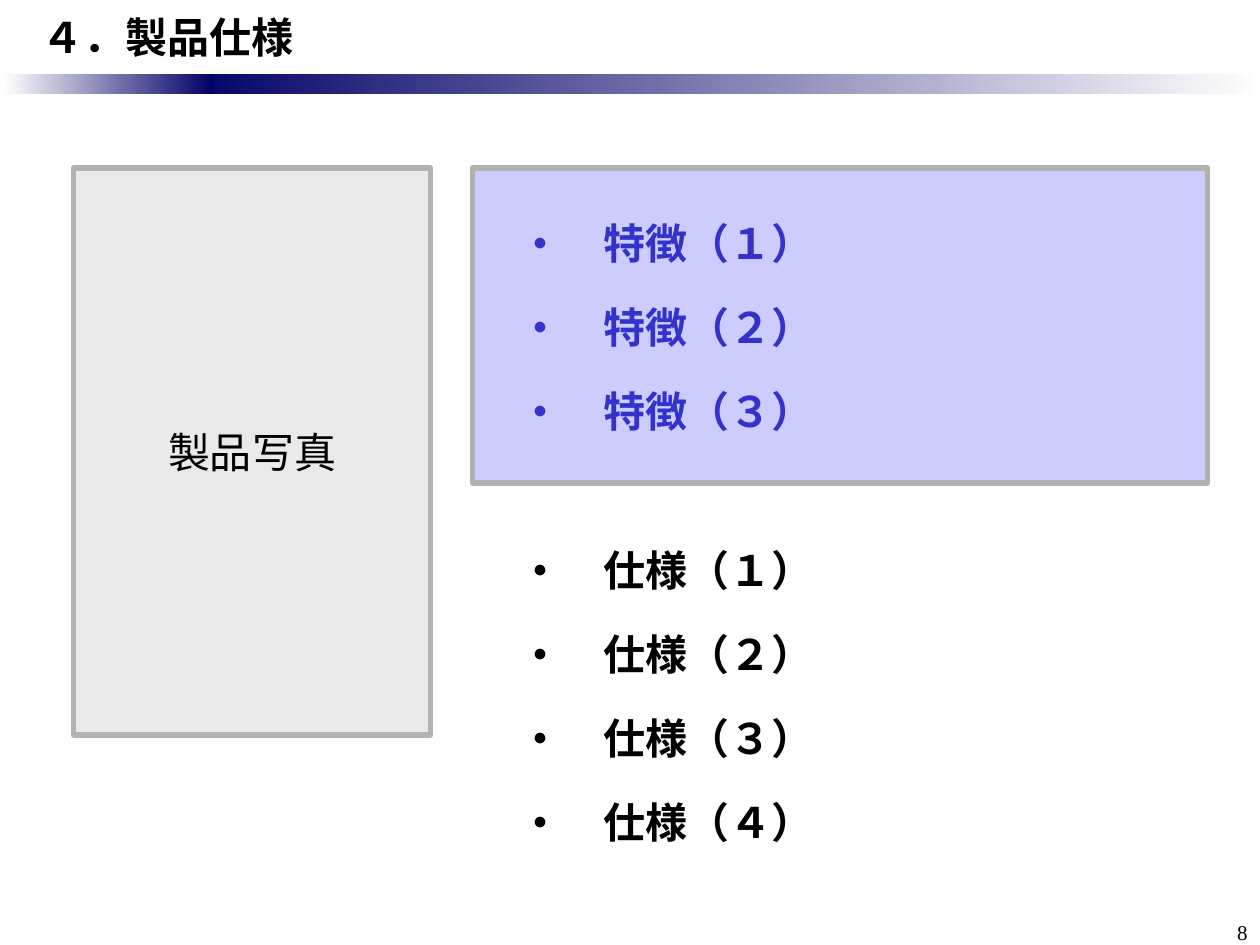
from dataclasses import dataclass

from lxml.etree import SubElement
from pptx import Presentation
from pptx.dml.color import RGBColor as Color
from pptx.enum.shapes import MSO_SHAPE as Shape
from pptx.enum.text import MSO_ANCHOR as Anchor, PP_ALIGN as Align
from pptx.oxml.ns import qn
from pptx.util import Pt


@dataclass(frozen=True)
class Theme:
    gothic: str = "Noto Sans CJK JP"
    roman: str = "Times New Roman"
    body_size: int = 24
    number_size: int = 12
    black: str = "000000"
    white: str = "FFFFFF"
    navy: str = "000066"
    blue: str = "3333CC"
    lavender: str = "CCCCFF"
    pale_gray: str = "EAEAEA"
    border: str = "B2B2B2"
    border_width: int = 3


LIST_SPACING = {"line_spacing": Pt(30), "space_after": Pt(18)}


class SlideBuilder:
    def __init__(self, slide, theme):
        self.slide = slide
        self.theme = theme

    def rectangle(self, area, fill=None, line=None):
        box = self.slide.shapes.add_shape(Shape.RECTANGLE, *map(Pt, area))
        box.shadow.inherit = False
        if fill:
            box.fill.solid()
            box.fill.fore_color.rgb = Color.from_string(fill)
        if line:
            box.line.color.rgb = Color.from_string(line)
            box.line.width = Pt(self.theme.border_width)
        else:
            box.line.fill.background()
        return box

    def gradient_band(self, area, colors):
        band = self.rectangle(area)
        band.fill.gradient()
        band.fill.gradient_angle = 0
        for stop, color, position in zip(band.fill.gradient_stops, colors, (0, 1)):
            stop.color.rgb = Color.from_string(color)
            stop.position = position

    def text_box(self, area, lines, **formats):
        box = self.slide.shapes.add_textbox(*map(Pt, area))
        self.add_lines(box, lines, **formats)

    def panel(self, area, lines, fill, line=None, **formats):
        self.add_lines(self.rectangle(area, fill, line), lines, **formats)

    def add_lines(self, box, lines, color=None, size=None, font=None, bold=False,
                  frame_format=None, para_format=None):
        frame = box.text_frame
        frame_values = {"word_wrap": True, "vertical_anchor": Anchor.TOP}
        self.apply(frame, frame_values | (frame_format or {}))
        para_values = {"alignment": Align.LEFT} | (para_format or {})
        font_values = {
            "name": font or self.theme.gothic,
            "size": Pt(size or self.theme.body_size),
            "bold": bold,
        }
        for index, line in enumerate(lines):
            para = frame.add_paragraph() if index else frame.paragraphs[0]
            self.apply(para, para_values)
            span = para.add_run()
            span.text = line
            self.apply(span.font, font_values)
            span.font.color.rgb = Color.from_string(color or self.theme.black)
            properties = span._r.get_or_add_rPr()
            east_asian = SubElement(properties, qn("a:ea"))
            east_asian.set("typeface", self.theme.gothic)

    @staticmethod
    def apply(target, values):
        for name, value in values.items():
            setattr(target, name, value)


def numbered_items(label, digits):
    return [f"・　{label}（{digit}）" for digit in digits]


def main():
    theme = Theme()
    deck = Presentation()
    deck.slide_width, deck.slide_height = Pt(720), Pt(540)
    page = SlideBuilder(deck.slides.add_slide(deck.slide_layouts[6]), theme)

    page.gradient_band((102, 42, 618, 12), (theme.navy, theme.white))
    page.gradient_band((2, 42, 120, 12), (theme.white, theme.navy))
    page.text_box((678, 522, 42, 18), ["8"], size=theme.number_size,
                  font=theme.roman, para_format={"alignment": Align.RIGHT})
    page.text_box((0, 0, 720, 42), ["４．製品仕様"], bold=True,
                  frame_format={"vertical_anchor": Anchor.MIDDLE,
                                "margin_left": Pt(24)})

    page.panel((270, 96, 420, 180), numbered_items("特徴", "１２３"),
               theme.lavender, theme.border, color=theme.blue, bold=True,
               frame_format={"vertical_anchor": Anchor.MIDDLE,
                             "margin_left": Pt(27)},
               para_format=LIST_SPACING)
    page.panel((270, 294, 420, 210), numbered_items("仕様", "１２３４"),
               theme.white, bold=True,
               frame_format={"margin_left": Pt(27), "margin_top": Pt(16)},
               para_format=LIST_SPACING)
    page.panel((42, 96, 204, 324), ["製品写真"], theme.pale_gray, theme.border,
               font=theme.roman,
               frame_format={"vertical_anchor": Anchor.MIDDLE,
                             "word_wrap": False},
               para_format={"alignment": Align.CENTER})

    deck.save("out.pptx")


if __name__ == "__main__":
    main()
